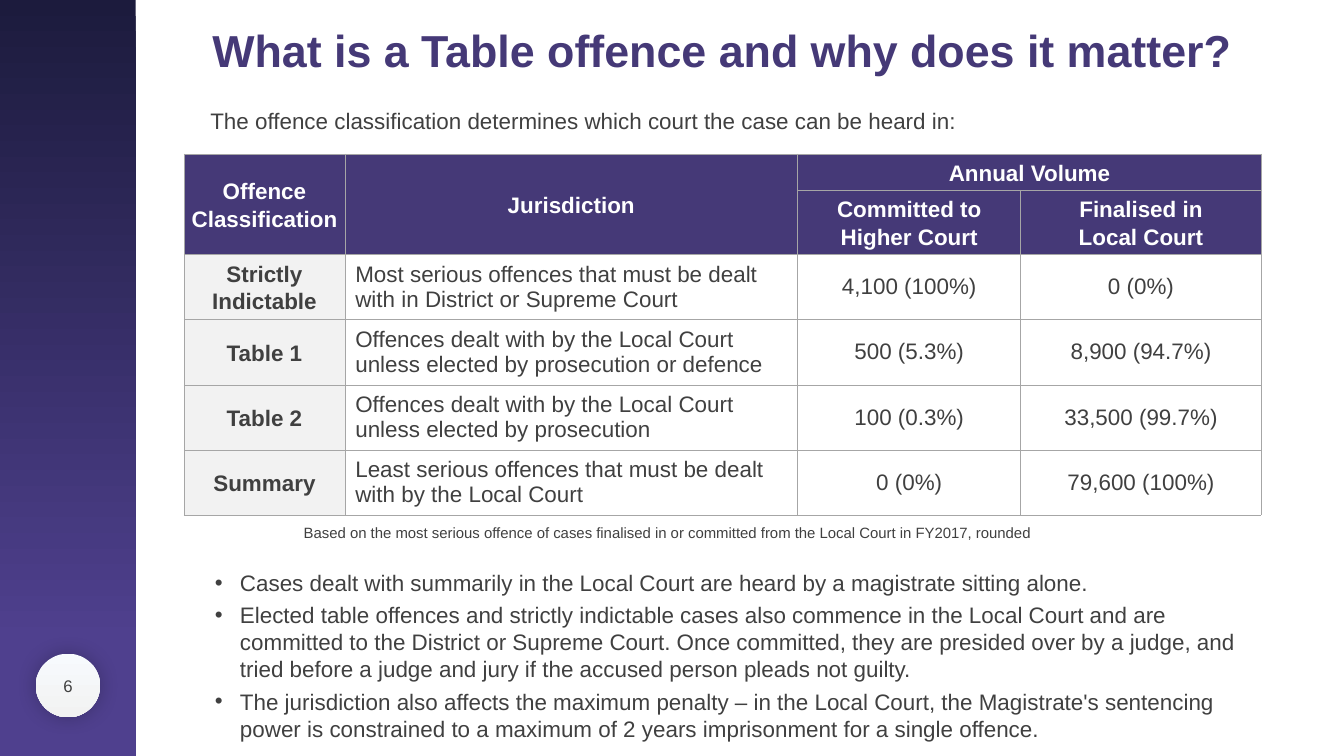
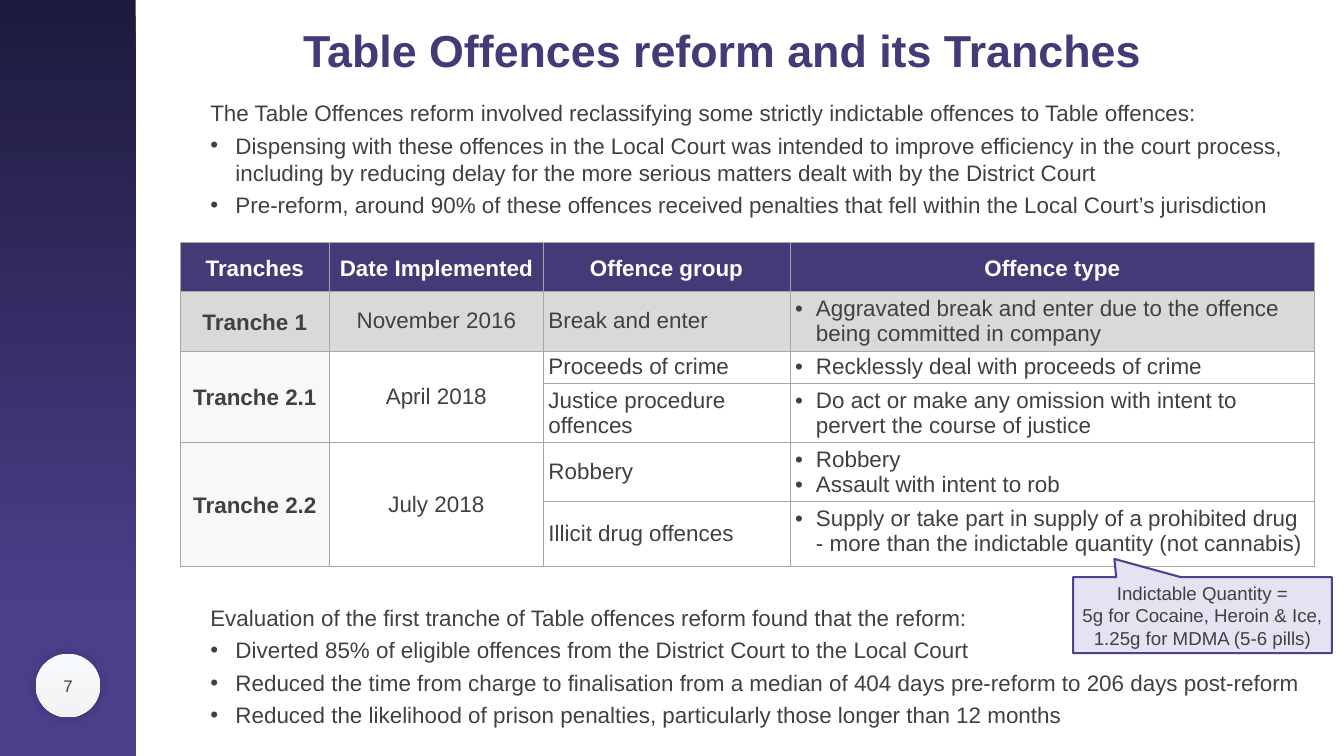
import lxml.etree
import pptx
import pptx.dml.color
import pptx.enum.shapes
import pptx.enum.text
import pptx.oxml
import pptx.oxml.ns
import pptx.util

Cm = pptx.util.Cm
Pt = pptx.util.Pt
Align = pptx.enum.text.PP_ALIGN
Anchor = pptx.enum.text.MSO_ANCHOR
AutoSize = pptx.enum.text.MSO_AUTO_SIZE
Preset = pptx.enum.shapes.MSO_SHAPE
qn = pptx.oxml.ns.qn
NAMESPACE = pptx.oxml.ns.nsdecls("a")

FONT = "Arial"
COLOURS = {
    name: pptx.dml.color.RGBColor.from_string(value)
    for name, value in {
        "text": "404040",
        "purple": "453977",
        "white": "FFFFFF",
        "band_top": "1C1B3D",
        "band_bottom": "4F408E",
        "badge_top": "F7FAFD",
        "light_grey": "F2F2F2",
        "mid_grey": "D9D9D9",
        "callout": "E5E2F2",
    }.items()
}
BORDER_COLOUR = "A6A6A6"
BORDER_WIDTH = Pt(0.5)


def write_lines(frame, text, size=24, colour="text", bold=False, align=Align.LEFT,
                line_spacing=None, space_after=None, bullets_from=None, indent=0.95):
    """Fill a text frame, one paragraph a line; bullet the lines from bullets_from on."""
    frame.text = text
    for index, paragraph in enumerate(frame.paragraphs):
        paragraph.alignment = align
        if line_spacing:
            paragraph.line_spacing = line_spacing
        if space_after:
            paragraph.space_after = Pt(space_after)
        if bullets_from is not None and index >= bullets_from:
            properties = paragraph._p.get_or_add_pPr()
            properties.set("marL", str(Cm(indent)))
            properties.set("indent", str(-Cm(indent)))
            lxml.etree.SubElement(properties, qn("a:buFont"), typeface=FONT)
            lxml.etree.SubElement(properties, qn("a:buChar"), char="•")
        paragraph.font.name = FONT
        paragraph.font.size = Pt(size)
        paragraph.font.bold = bold
        paragraph.font.color.rgb = COLOURS[colour]


def add_gradient_shape(slide, preset, box, top_colour, bottom_colour, end_position):
    shape = slide.shapes.add_shape(preset, *map(Cm, box))
    shape.shadow.inherit = False
    shape.line.fill.background()
    shape.fill.gradient()
    shape.fill.gradient_angle = 270
    positions = (0, end_position)
    for stop, name, position in zip(shape.fill.gradient_stops, (top_colour, bottom_colour), positions):
        stop.color.rgb = COLOURS[name]
        stop.position = position
    return shape


# In table rows, None marks a cell covered by a merged neighbour.
# Text boxes are (box, size, space after, first bulleted line, text).
slides = [
    {
        "number": "6",
        "title": "What is a Table offence and why does it matter?",
        "title_width": 39.5,
        "texts": [
            ((7.7, 3.94, 40.46, 1.27), 24, None, None,
             "The offence classification determines which court the case can be heard in:"),
            ((11.23, 19.66, 32.69, 0.94), 16, None, None,
             "Based on the most serious offence of cases finalised in or committed from the "
             "Local Court in FY2017, rounded"),
            ((7.87, 21.39, 40.34, 6.83), 24, 6, 0,
             "Cases dealt with summarily in the Local Court are heard by a magistrate sitting alone.\n"
             "Elected table offences and strictly indictable cases also commence in the Local Court "
             "and are committed to the District or Supreme Court. Once committed, they are presided "
             "over by a judge, and tried before a judge and jury if the accused person pleads not "
             "guilty.\n"
             "The jurisdiction also affects the maximum penalty – in the Local Court, the "
             "Magistrate's sentencing power is constrained to a maximum of 2 years imprisonment "
             "for a single offence."),
        ],
        "table_at": (6.96, 5.82),
        "widths": (6.07, 17.12, 8.43, 9.09),
        "heights": (1.37, 2.18, 2.46, 2.46, 2.46, 2.46),
        "header_rows": 2,
        "merges": [((0, 0), (1, 0)), ((0, 1), (1, 1)), ((0, 2), (0, 3))],
        "columns": ("label", "left", "centre", "centre"),
        "left_margin": 0.4,
        "rows": [
            ("Offence Classification", "Jurisdiction", "Annual Volume", None),
            (None, None, "Committed to\nHigher Court", "Finalised in\nLocal Court"),
            ("Strictly Indictable",
             "Most serious offences that must be dealt with in District or Supreme Court",
             "4,100 (100%)", "0 (0%)"),
            ("Table 1",
             "Offences dealt with by the Local Court unless elected by prosecution or defence",
             "500 (5.3%)", "8,900 (94.7%)"),
            ("Table 2",
             "Offences dealt with by the Local Court unless elected by prosecution",
             "100 (0.3%)", "33,500 (99.7%)"),
            ("Summary",
             "Least serious offences that must be dealt with by the Local Court",
             "0 (0%)", "79,600 (100%)"),
        ],
        "label_alpha": None,
        "shaded_row": None,
    },
    {
        "number": "7",
        "title": "Table Offences reform and its Tranches",
        "title_width": 33.78,
        "texts": [
            ((7.7, 3.63, 41.02, 4.78), 24, 6, 1,
             "The Table Offences reform involved reclassifying some strictly indictable offences "
             "to Table offences:\n"
             "Dispensing with these offences in the Local Court was intended to improve efficiency "
             "in the court process, including by reducing delay for the more serious matters dealt "
             "with by the District Court\n"
             "Pre-reform, around 90% of these offences received penalties that fell within the "
             "Local Court’s jurisdiction"),
            ((7.7, 22.71, 41.76, 5), 24, 6, 1,
             "Evaluation of the first tranche of Table offences reform found that the reform:\n"
             "Diverted 85% of eligible offences from the District Court to the Local Court\n"
             "Reduced the time from charge to finalisation from a median of 404 days pre-reform "
             "to 206 days post-reform\n"
             "Reduced the likelihood of prison penalties, particularly those longer than 12 months"),
        ],
        "table_at": (6.81, 9.17),
        "widths": (5.64, 8.08, 9.32, 19.84),
        "heights": (1.85, 2.24, 1.24, 2.16, 2.16, 2.24),
        "header_rows": 1,
        "merges": [((row, column), (row + 1, column)) for row in (2, 4) for column in (0, 1)],
        "columns": ("label", "centre", "left", "bullets"),
        "left_margin": 0.2,
        "rows": [
            ("Tranches", "Date Implemented", "Offence group", "Offence type"),
            ("Tranche 1", "November 2016", "Break and enter",
             "Aggravated break and enter due to the offence being committed in company"),
            ("Tranche 2.1", "April 2018", "Proceeds of crime",
             "Recklessly deal with proceeds of crime"),
            (None, None, "Justice procedure offences",
             "Do act or make any omission with intent to pervert the course of justice"),
            ("Tranche 2.2", "July 2018", "Robbery", "Robbery\nAssault with intent to rob"),
            (None, None, "Illicit drug offences",
             "Supply or take part in supply of a prohibited drug - more than the indictable "
             "quantity (not cannabis)"),
        ],
        "label_alpha": 50,
        "shaded_row": 1,
    },
]

presentation = pptx.Presentation()
presentation.slide_width = Cm(50.8)
presentation.slide_height = Cm(28.58)
title_only = presentation.slide_layouts[5]
title_centre = 27.3

for content in slides:
    slide = presentation.slides.add_slide(title_only)

    # Side band with the page number badge
    add_gradient_shape(slide, Preset.RECTANGLE, (0, 0, 5.13, 28.58), "band_top", "band_bottom", 0.85)
    badge = add_gradient_shape(slide, Preset.OVAL, (1.35, 24.71, 2.44, 2.41),
                               "badge_top", "light_grey", 1)
    effects = badge._element.spPr.find(qn("a:effectLst"))
    effects.append(pptx.oxml.parse_xml(
        f'<a:outerShdw {NAMESPACE} blurRad="{Pt(22)}" dist="0" dir="0" algn="ctr" rotWithShape="0">'
        '<a:srgbClr val="000000"><a:alpha val="24000"/></a:srgbClr></a:outerShdw>'))
    page_number = slide.shapes.add_textbox(Cm(1.35), Cm(24.92), Cm(2.44), Cm(1.98))
    page_number.text_frame.word_wrap = True
    page_number.text_frame.vertical_anchor = Anchor.MIDDLE
    write_lines(page_number.text_frame, content["number"], 18, align=Align.CENTER)

    title = slide.shapes.title
    title.left, title.top = Cm(title_centre - content["title_width"] / 2), Cm(0.74)
    title.width, title.height = Cm(content["title_width"]), Cm(2.31)
    title.text_frame.word_wrap = False
    title.text_frame.auto_size = AutoSize.SHAPE_TO_FIT_TEXT
    title.text_frame.vertical_anchor = Anchor.TOP
    write_lines(title.text_frame, content["title"], 48, "purple", True, Align.CENTER)

    for box, size, space_after, bullets_from, text in content["texts"]:
        text_box = slide.shapes.add_textbox(*map(Cm, box))
        text_box.text_frame.word_wrap = True
        text_box.text_frame.auto_size = AutoSize.SHAPE_TO_FIT_TEXT
        write_lines(text_box.text_frame, text, size, space_after=space_after,
                    bullets_from=bullets_from)

    widths, heights = content["widths"], content["heights"]
    left, top = content["table_at"]
    table = slide.shapes.add_table(len(heights), len(widths), Cm(left), Cm(top),
                                   Cm(sum(widths)), Cm(sum(heights))).table
    table.first_row = table.horz_banding = False
    for column, width in zip(table.columns, widths):
        column.width = Cm(width)
    for row, height in zip(table.rows, heights):
        row.height = Cm(height)
    for first, last in content["merges"]:
        table.cell(*first).merge(table.cell(*last))

    for row_index, row_texts in enumerate(content["rows"]):
        is_header = row_index < content["header_rows"]
        for column_index, text in enumerate(row_texts):
            cell = table.cell(row_index, column_index)
            style = "header" if is_header else content["columns"][column_index]
            cell_properties = cell._tc.get_or_add_tcPr()
            for side in ("lnL", "lnR", "lnT", "lnB"):
                cell_properties.append(pptx.oxml.parse_xml(
                    f'<a:{side} {NAMESPACE} w="{BORDER_WIDTH}"><a:solidFill>'
                    f'<a:srgbClr val="{BORDER_COLOUR}"/></a:solidFill></a:{side}>'))

            fill_colour = {"header": "purple", "label": "light_grey"}.get(style)
            if row_index == content["shaded_row"]:
                fill_colour = "mid_grey"
            if fill_colour:
                cell.fill.solid()
                cell.fill.fore_color.rgb = COLOURS[fill_colour]
            else:
                cell.fill.background()
            if fill_colour == "light_grey" and content["label_alpha"]:
                colour_element = cell_properties.findall(qn("a:solidFill"))[0][0]
                lxml.etree.SubElement(colour_element, qn("a:alpha"),
                                      val=str(content["label_alpha"] * 1000))
            if text is None:
                continue

            cell.vertical_anchor = Anchor.MIDDLE
            cell.margin_top = cell.margin_bottom = Cm(0.1)
            cell.margin_left = cell.margin_right = Cm(0.1 if is_header else 0.2)
            if style == "left":
                cell.margin_left = Cm(content["left_margin"])
            emphasised = style in ("header", "label")
            write_lines(
                cell.text_frame, text,
                colour="white" if is_header else "text",
                bold=emphasised,
                align=Align.LEFT if style in ("left", "bullets") else Align.CENTER,
                line_spacing=1.1 if emphasised else None,
                bullets_from=0 if style == "bullets" else None,
                indent=0.79)

# The last slide's drug row leaves room for the callout's tip
table.cell(5, 3).margin_bottom = Cm(0.3)
callout = slide.shapes.add_shape(Preset.RECTANGULAR_CALLOUT, Cm(40.56), Cm(21.82), Cm(9.78), Cm(2.87))
callout.adjustments[0] = -0.34
callout.adjustments[1] = -0.74
callout.shadow.inherit = False
callout.fill.solid()
callout.fill.fore_color.rgb = COLOURS["callout"]
callout.line.color.rgb = COLOURS["band_bottom"]
callout.line.width = Pt(2.25)
callout.text_frame.word_wrap = True
callout.text_frame.vertical_anchor = Anchor.MIDDLE
write_lines(callout.text_frame,
            "Indictable Quantity =\n5g for Cocaine, Heroin & Ice, 1.25g for MDMA (5-6 pills)",
            20, align=Align.CENTER)

presentation.save("out.pptx")
